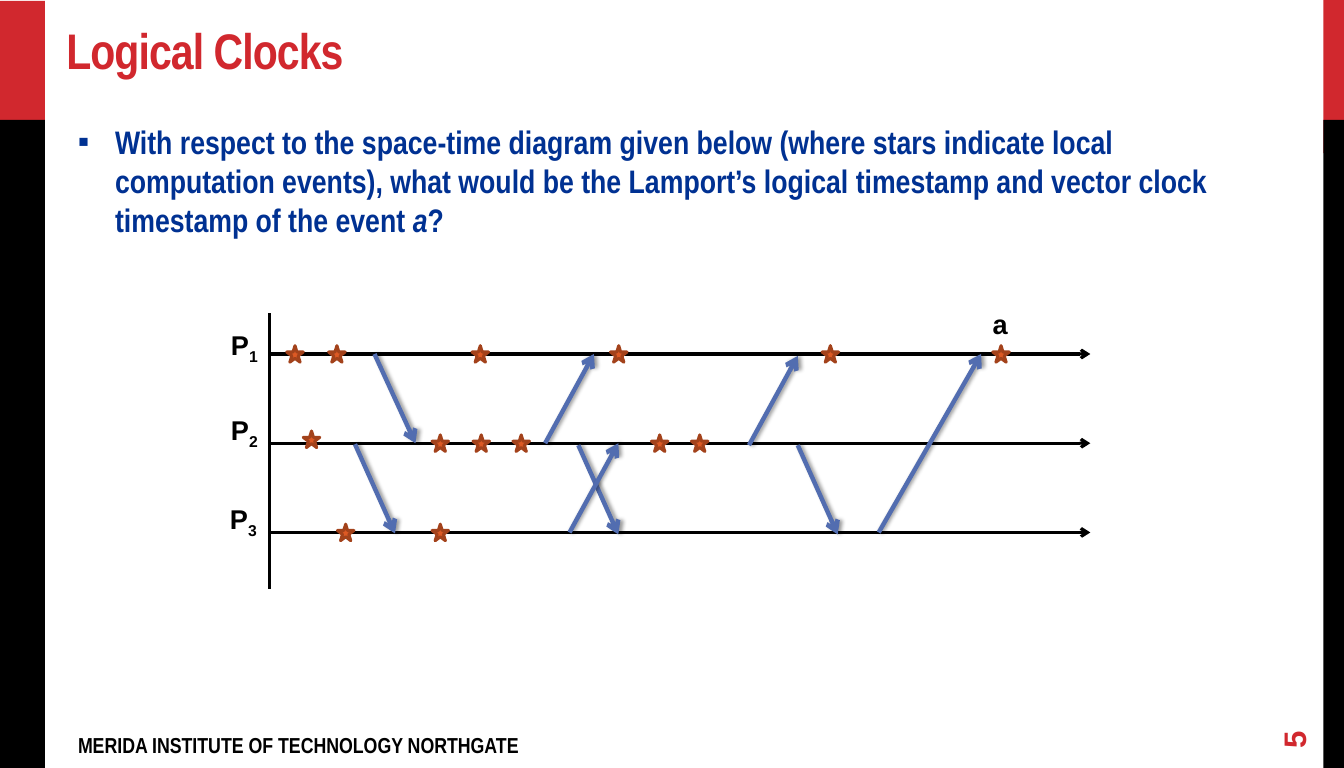
from dataclasses import dataclass

from lxml import etree
from pptx import Presentation
from pptx import util as u
from pptx.dml.color import RGBColor
from pptx.enum import shapes, text
from pptx.oxml import ns

SLIDE_HEIGHT = 7.875
SLIDE_WIDTH = SLIDE_HEIGHT * 1.75
RED, BLACK, NAVY = "D1282E", "000000", "003192"
STAR_FILL, STAR_EDGE, MESSAGE_BLUE = "DC5924", "A3421B", "526DB0"
AXIS_X, TIMELINE_END = 2.76, 11.18
FIRST_TIMELINE, TIMELINE_GAP = 3.63, 0.915
STAR_SIZE = 0.17


@dataclass
class Sidebar:
    left: float
    top: float
    width: float
    height: float
    color: str


@dataclass
class Process:
    label_left: float
    label_top: float
    star_lefts: list[float]


@dataclass
class Message:
    """Processes count from 0; drop moves the whole arrow down."""
    sender: int
    sent_x: float
    receiver: int
    received_x: float
    drop: float = 0


@dataclass
class Label:
    left: float
    top: float
    width: float
    height: float
    size: float
    color: str = BLACK
    font: str = "Arial"
    margins: tuple[float, float] = (0.11, 0.06)
    anchor: text.MSO_ANCHOR = text.MSO_ANCHOR.TOP
    wrap: bool = True


SIDEBARS = [
    Sidebar(13.57, 0, 0.22, 1.57, RED),
    Sidebar(13.57, 1.23, 0.22, 6.65, BLACK),
    Sidebar(0, 0.01, 0.46, 1.57, RED),
    Sidebar(0, 1.23, 0.46, 6.65, BLACK),
]
PROCESSES = [
    Process(2.27, 3.32, [2.94, 3.37, 4.84, 6.26, 8.43, 10.18]),
    Process(2.27, 4.19, [4.43, 4.85, 5.26, 6.68, 7.09]),
    Process(2.26, 5.10, [3.46, 4.43]),
]
MESSAGES = [
    Message(0, 3.84, 1, 4.26),
    Message(1, 3.64, 2, 4.05, 0.01),
    Message(1, 5.93, 2, 6.34, 0.02),
    Message(1, 8.18, 2, 8.59, 0.02),
    Message(2, 5.84, 1, 6.34),
    Message(1, 5.59, 0, 6.09),
    Message(1, 7.68, 0, 8.18, 0.02),
    Message(2, 9.01, 0, 10.06),
]
QUESTION = ("With respect to the space-time diagram given below (where stars indicate local "
            "computation events), what would be the Lamport’s logical timestamp and vector "
            "clock timestamp of the event ")


def rgb(color: str) -> RGBColor:
    return RGBColor.from_string(color)


def timeline_y(process: int) -> float:
    return FIRST_TIMELINE + process * TIMELINE_GAP


def add_filled(slide, kind, left: float, top: float, width: float, height: float, fill: str):
    shape = slide.shapes.add_shape(kind, *map(u.Inches, (left, top, width, height)))
    shape.shadow.inherit = False
    shape.fill.solid()
    shape.fill.fore_color.rgb = rgb(fill)
    shape.line.fill.background()
    return shape


def add_star(slide, left: float, top: float) -> None:
    star = add_filled(slide, shapes.MSO_SHAPE.STAR_5_POINT, left, top,
                      STAR_SIZE, STAR_SIZE, STAR_FILL)
    star.line.color.rgb = rgb(STAR_EDGE)
    star.line.width = u.Pt(2.25)


def add_line(slide, start: tuple[float, float], end: tuple[float, float], color: str,
             width: float, arrow: bool = True, shadow: bool = False) -> None:
    line = slide.shapes.add_connector(shapes.MSO_CONNECTOR.STRAIGHT,
                                      *map(u.Inches, (*start, *end)))
    line.line.color.rgb = rgb(color)
    line.line.width = u.Pt(width)
    properties = line._element.spPr
    if arrow:
        etree.SubElement(properties.find(ns.qn("a:ln")), ns.qn("a:tailEnd"), type="arrow")
    effects = etree.SubElement(properties, ns.qn("a:effectLst"))
    if shadow:
        outer = etree.SubElement(effects, ns.qn("a:outerShdw"), blurRad=str(u.Pt(3.1)),
                                 dist=str(u.Pt(1.8)), dir="0", rotWithShape="0")
        shade = etree.SubElement(outer, ns.qn("a:srgbClr"), val=BLACK)
        etree.SubElement(shade, ns.qn("a:alpha"), val="40000")


def add_label(slide, label: Label, *pieces: str):
    """Add a bold text box with one run for each piece."""
    box = slide.shapes.add_textbox(
        *map(u.Inches, (label.left, label.top, label.width, label.height)))
    frame = box.text_frame
    frame.word_wrap = label.wrap
    frame.vertical_anchor = label.anchor
    frame.margin_left = frame.margin_right = u.Inches(label.margins[0])
    frame.margin_top = frame.margin_bottom = u.Inches(label.margins[1])
    for piece in pieces:
        run = frame.paragraphs[0].add_run()
        run.text = piece
        run.font.name = label.font
        run.font.size = u.Pt(label.size)
        run.font.bold = True
        run.font.color.rgb = rgb(label.color)
    return box


def add_frame(slide) -> None:
    """Add the sidebars, title, footer and page number."""
    for bar in SIDEBARS:
        add_filled(slide, shapes.MSO_SHAPE.RECTANGLE, bar.left, bar.top,
                   bar.width, bar.height, bar.color)
    title = add_label(slide, Label(0.57, 0.18, 12.86, 0.7, 36.9, RED, "Arial Narrow",
                                   anchor=text.MSO_ANCHOR.BOTTOM), "Logical Clocks")
    title.text_frame.paragraphs[0].runs[0].font._element.set("spc", "-70")
    add_label(slide, Label(0.69, 7.44, 8.38, 0.34, 16, font="Arial Narrow"),
              "MERIDA INSTITUTE OF TECHNOLOGY NORTHGATE")
    page_number = add_label(slide, Label(12.86, 7.21, 0.81, 0.34, 23, RED,
                                         anchor=text.MSO_ANCHOR.MIDDLE), "5")
    page_number.rotation = 270


def add_question(slide) -> None:
    question = add_label(slide, Label(0.69, 1.19, 12.4, 6, 24, NAVY, "Arial Narrow"),
                         QUESTION, "a", "?")
    paragraph = question.text_frame.paragraphs[0]
    paragraph.runs[1].font.italic = True
    paragraph.space_before = u.Pt(4.8)
    paragraph.space_after = u.Pt(6.8)
    properties = paragraph._p.get_or_add_pPr()
    properties.set("marL", str(u.Inches(0.38)))
    properties.set("indent", str(u.Inches(-0.38)))
    etree.SubElement(properties, ns.qn("a:buFont"), typeface="Arial")
    etree.SubElement(properties, ns.qn("a:buChar"), char="▪")


def add_diagram(slide) -> None:
    add_line(slide, (AXIS_X, 3.21), (AXIS_X, 6.04), BLACK, 2.25, arrow=False)
    for index in range(len(PROCESSES)):
        y = timeline_y(index)
        add_line(slide, (AXIS_X, y), (TIMELINE_END, y), BLACK, 2.25)
    for index, process in enumerate(PROCESSES):
        for left in process.star_lefts:
            add_star(slide, left, timeline_y(index) - STAR_SIZE / 2)
    add_star(slide, 3.11, 4.42)
    for message in MESSAGES:
        add_line(slide, (message.sent_x, timeline_y(message.sender) + message.drop),
                 (message.received_x, timeline_y(message.receiver) + message.drop),
                 MESSAGE_BLUE, 3.25, shadow=True)
    add_label(slide, Label(10.08, 3.1, 0.36, 0.44, 20, margins=(0.1, 0.05), wrap=False), "a")
    for number, process in enumerate(PROCESSES, 1):
        name = add_label(slide, Label(process.label_left, process.label_top, 0.49, 0.44, 20,
                                      margins=(0.1, 0.05), wrap=False), "P", str(number))
        name.text_frame.paragraphs[0].runs[1].font._element.set("baseline", "-25000")


def main() -> None:
    deck = Presentation()
    deck.slide_width, deck.slide_height = u.Inches(SLIDE_WIDTH), u.Inches(SLIDE_HEIGHT)
    slide = deck.slides.add_slide(deck.slide_layouts[6])
    add_frame(slide)
    add_question(slide)
    add_diagram(slide)
    deck.save("out.pptx")


if __name__ == "__main__":
    main()
